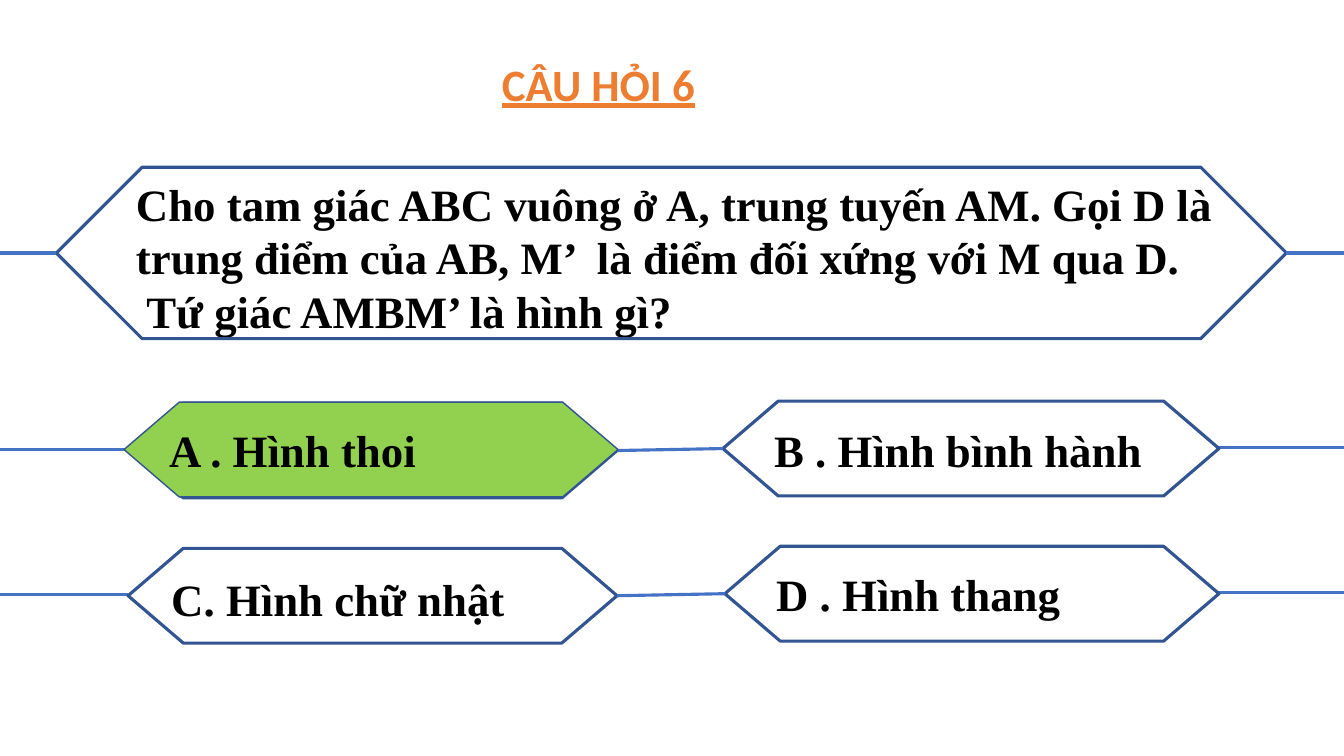
import pptx
import pptx.dml.color
import pptx.enum.shapes
import pptx.enum.text
import pptx.util
from pptx.oxml.ns import qn

PX = 9144  # EMU per px, 100 px to the inch
SLIDE_W, SLIDE_H = 1333, 750
ROW_TOP, ROW_STEP = 398, 144

COLORS = {
    "title": "ED7D31",
    "text": "000000",
    "outline": "325491",
    "wire": "4472C4",
    "correct": "92D050",
}


def emu(*lengths):
    return [pptx.util.Emu(n * PX) for n in lengths]


def rgb(name):
    return pptx.dml.color.RGBColor.from_string(COLORS[name])


def add_text(s, box, lines, font="Times New Roman", color="text", underline=None):
    tf = s.shapes.add_textbox(*emu(*box)).text_frame
    tf.word_wrap = True
    tf.auto_size = pptx.enum.text.MSO_AUTO_SIZE.SHAPE_TO_FIT_TEXT
    tf.text = "\n".join(lines)
    for p in tf.paragraphs:
        for r in p.runs:
            r.font.name = font
            r.font.size = pptx.util.Pt(32)
            r.font.bold = True
            r.font.underline = underline
            r.font.color.rgb = rgb(color)


def add_hexagon(s, box, slant=0.583, fill=None, weight=2.25):
    """Add a long hexagon; slant is the depth of its points relative to its height."""
    sp = s.shapes.add_shape(pptx.enum.shapes.MSO_SHAPE.HEXAGON, *emu(*box))
    sp.shadow.inherit = False
    sp.adjustments[0] = slant
    sp.adjustments[1] = 1.155
    if fill:
        sp.fill.solid()
        sp.fill.fore_color.rgb = rgb(fill)
    else:
        sp.fill.background()
    sp.line.color.rgb = rgb("outline")
    sp.line.width = pptx.util.Pt(weight)


def add_wire(s, x1, y1, x2, y2):
    line = s.shapes.add_connector(
        pptx.enum.shapes.MSO_CONNECTOR.STRAIGHT, *emu(x1, y1, x2, y2))
    line.line.color.rgb = rgb("wire")
    line.line.width = pptx.util.Pt(2.25)
    sp_pr = line._element.spPr
    sp_pr.append(sp_pr.makeelement(qn("a:effectLst"), {}))


def add_answer_row(s, top, right_x):
    """Add two hexagons joined to each other and to both slide edges."""
    add_wire(s, 0, top + 48, 127, top + 48)
    add_wire(s, 1206, top + 46, SLIDE_W, top + 46)
    add_hexagon(s, (127, top + 2, 485, 94))
    add_hexagon(s, (right_x, top, 1209 - right_x, 94))
    add_wire(s, right_x, top + 47, 612, top + 49)


def main():
    prs = pptx.Presentation()
    prs.slide_width, prs.slide_height = emu(SLIDE_W, SLIDE_H)
    s = prs.slides.add_slide(prs.slide_layouts[6])

    add_text(s, (488, 51, 336, 59), ["CÂU HỎI 6"], "Calibri", "title", True)

    add_text(s, (125, 170, 1105, 172), [
        "Cho tam giác ABC vuông ở A, trung tuyến AM. Gọi D là trung điểm "
        "của AB, M’  là điểm đối xứng với M qua D.",
        " Tứ giác AMBM’ là hình gì?",
    ])
    add_hexagon(s, (56, 166, 1220, 170), slant=0.5)
    add_wire(s, 1275, 251, SLIDE_W, 251)
    add_wire(s, 0, 251, 56, 251)

    for row, right_x in enumerate((717, 719)):
        add_answer_row(s, ROW_TOP + row * ROW_STEP, right_x)
    add_hexagon(s, (123, 399, 490, 94), fill="correct", weight=1)

    answers = [
        ((158, 414, 423, 64), "A . Hình thoi"),
        ((758, 414, 398, 64), "B . Hình bình hành"),
        ((160, 562, 408, 64), "C. Hình chữ nhật"),
        ((760, 557, 410, 64), "D . Hình thang"),
    ]
    for box, answer in answers:
        add_text(s, box, [answer])

    prs.save("out.pptx")


if __name__ == "__main__":
    main()
